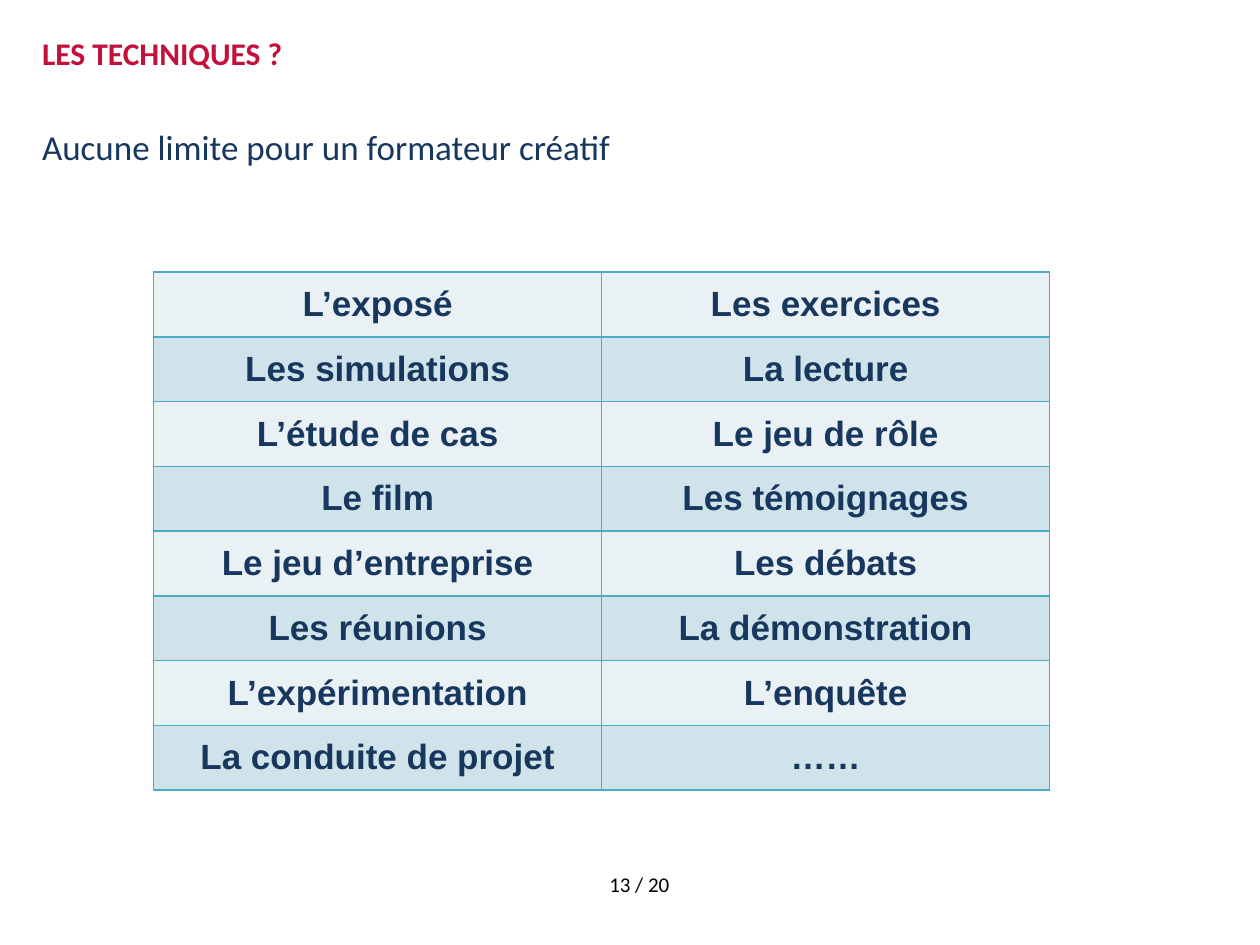
from lxml.etree import SubElement as Sub
from pptx import Presentation
from pptx.dml.color import RGBColor as RGB
from pptx.enum.shapes import MSO_SHAPE as Shape
from pptx.enum.text import MSO_ANCHOR as Anchor, MSO_AUTO_SIZE as Fit, PP_ALIGN as Align
from pptx.oxml.ns import qn
from pptx.util import Pt

TITLE = "LES TECHNIQUES ?"
LEAD = "Aucune limite pour un formateur créatif"
PAGE = "13 / 20"
ROWS = [
    ("L’exposé", "Les exercices"),
    ("Les simulations", "La lecture"),
    ("L’étude de cas", "Le jeu de rôle"),
    ("Le film", "Les témoignages"),
    ("Le jeu d’entreprise", "Les débats"),
    ("Les réunions", "La démonstration"),
    ("L’expérimentation", "L’enquête"),
    ("La conduite de projet", "……"),
]

THEME = {
    "title": {"size": Pt(18), "name": "Calibri", "bold": True, "color": "C2113A"},
    "lead": {"size": Pt(20), "name": "Calibri", "bold": False, "color": "17375E"},
    "cell": {"size": Pt(20), "name": "Arial", "bold": True, "color": "17375E"},
    "page": {"size": Pt(12), "name": "Calibri", "bold": False, "color": "000000"},
    "back": "FFFFFF",
    "bands": ("E9F1F5", "D0E3EA"),
    "rule": "4BACC6",
}
BLOCK = {"alignment": Align.JUSTIFY, "line_spacing": Pt(20), "space_after": Pt(12)}
CENTER = {"alignment": Align.CENTER}

LEFT, WIDE = 24, 672
GRID = (87.84, 155.52, 512, 296)


def paint(fill, color):
    fill.solid()
    fill.fore_color.rgb = RGB.from_string(color)


def write(frame, text, style, layout):
    para = frame.paragraphs[0]
    for key, value in layout.items():
        setattr(para, key, value)
    run = para.add_run()
    run.text = text
    for key, value in THEME[style].items():
        if key == "color":
            run.font.color.rgb = RGB.from_string(value)
        else:
            setattr(run.font, key, value)


def add_block(slide, text, style, top, high):
    box = slide.shapes.add_shape(
        Shape.RECTANGLE, Pt(LEFT), Pt(top), Pt(WIDE), Pt(high))
    box.shadow.inherit = False
    paint(box.fill, THEME["back"])
    box.line.fill.background()
    frame = box.text_frame
    frame.word_wrap = True
    frame.vertical_anchor = Anchor.TOP
    for side in ("left", "top", "right", "bottom"):
        setattr(frame, f"margin_{side}", 0)
    write(frame, text, style, BLOCK)


def add_rules(cell):
    """Draw a line on each side; call before the fill to keep XML order."""
    props = cell._tc.get_or_add_tcPr()
    for side in "LRTB":
        line = Sub(props, qn(f"a:ln{side}"), w=str(Pt(1)))
        Sub(Sub(line, qn("a:solidFill")), qn("a:srgbClr"), val=THEME["rule"])


def add_grid(slide):
    left, top, wide, high = GRID
    table = slide.shapes.add_table(
        len(ROWS), len(ROWS[0]), Pt(left), Pt(top), Pt(wide), Pt(high)).table
    table.first_row = table.horz_banding = False
    for col in table.columns:
        col.width = Pt(wide / len(ROWS[0]))
    for r, row in enumerate(ROWS):
        table.rows[r].height = Pt(high / len(ROWS))
        for c, text in enumerate(row):
            cell = table.cell(r, c)
            add_rules(cell)
            paint(cell.fill, THEME["bands"][r % 2])
            cell.vertical_anchor = Anchor.MIDDLE
            write(cell.text_frame, text, "cell", CENTER)


def add_page(slide):
    box = slide.shapes.add_textbox(Pt(315.36), Pt(494.64), Pt(100), Pt(22))
    frame = box.text_frame
    frame.word_wrap = True
    frame.auto_size = Fit.SHAPE_TO_FIT_TEXT
    write(frame, PAGE, "page", CENTER)


def main():
    deck = Presentation()
    deck.slide_width, deck.slide_height = Pt(720), Pt(540)
    slide = deck.slides.add_slide(deck.slide_layouts[6])
    paint(slide.background.fill, THEME["back"])
    add_block(slide, TITLE, "title", 20.88, 54.72)
    add_block(slide, LEAD, "lead", 75.6, 368)
    add_grid(slide)
    add_page(slide)
    deck.save("out.pptx")


if __name__ == "__main__":
    main()
